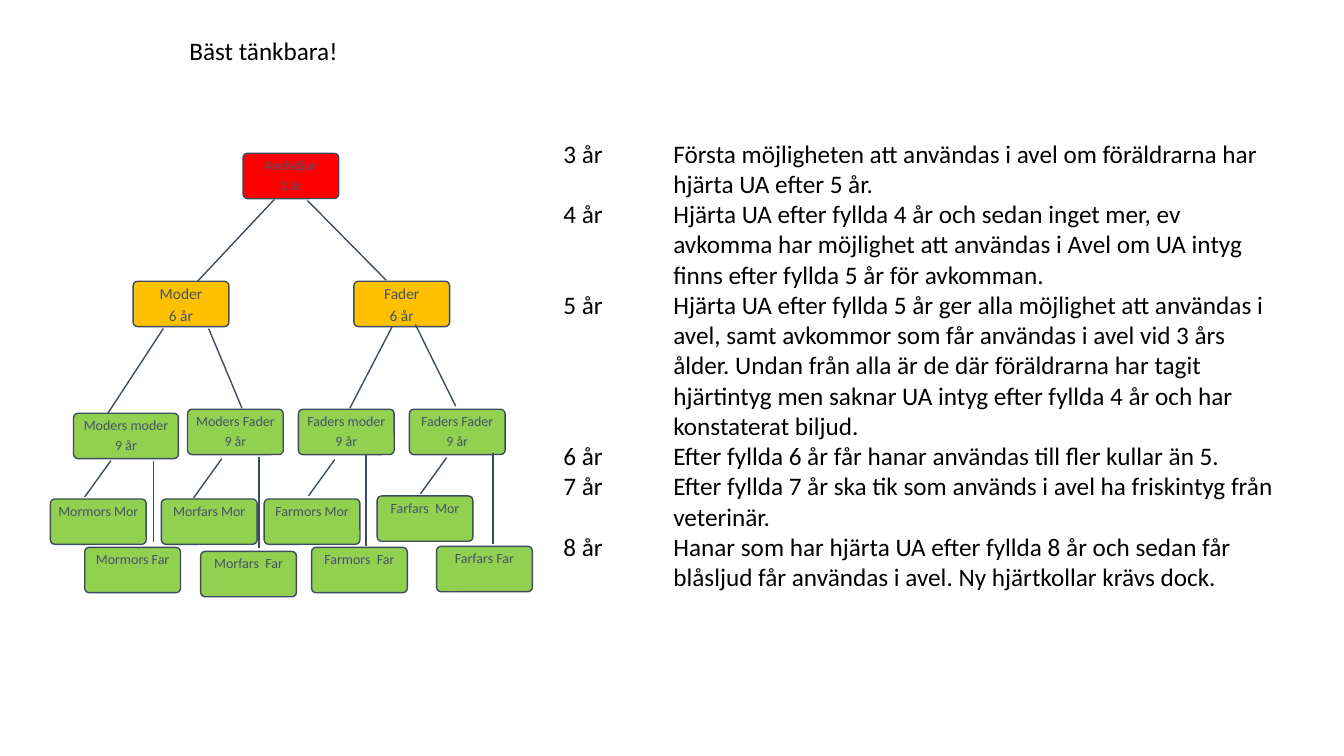
"""Builds the breeding pedigree slide with its age rules."""
from lxml import etree
from pptx import Presentation
from pptx.dml.color import RGBColor
from pptx.enum.shapes import MSO_CONNECTOR as CONN, MSO_SHAPE as SHAPE
from pptx.enum.text import MSO_ANCHOR as ANCHOR, PP_ALIGN as ALIGN
from pptx.oxml.ns import qn
from pptx.util import Inches, Pt

COLORS = {"text": "000000", "label": "44546A", "line": "3E4C60",
          "animal": "FF0000", "parent": "FFC000", "ancestor": "92D050"}
BOX_W, BOX_H = 0.95, 0.45
LINE_PT = 21.6


def write(tf, lines, size=18, color="text", align=ALIGN.LEFT, spacing=1.0, after=0, gaps=()):
    for i, text in enumerate(lines):
        p = tf.paragraphs[0] if i == 0 else tf.add_paragraph()
        p.alignment = align
        p.line_spacing = spacing
        p.space_after = Pt(after)
        if gaps:
            p.space_before = Pt(gaps[i])
        r = p.add_run()
        r.text = text
        r.font.size = Pt(size)
        r.font.name = "Calibri"
        r.font.color.rgb = RGBColor.from_string(COLORS[color])


prs = Presentation()
prs.slide_width, prs.slide_height = Inches(13.33), Inches(7.5)
s = prs.slides.add_slide(prs.slide_layouts[6])

rules = [
    ("3 år", 2, "Första möjligheten att användas i avel om föräldrarna har hjärta UA efter 5 år."),
    ("4 år", 3, "Hjärta UA efter fyllda 4 år och sedan inget mer, ev avkomma har möjlighet att "
                "användas i Avel om UA intyg finns efter fyllda 5 år för avkomman."),
    ("5 år", 5, "Hjärta UA efter fyllda 5 år ger alla möjlighet att användas i avel, samt avkommor "
                "som får användas i avel vid 3 års ålder. Undan från alla är de där föräldrarna har "
                "tagit hjärtintyg men saknar UA intyg efter fyllda 4 år och har konstaterat biljud."),
    ("6 år", 1, "Efter fyllda 6 år får hanar användas till fler kullar än 5."),
    ("7 år", 2, "Efter fyllda 7 år ska tik som används i avel ha friskintyg från veterinär."),
    ("8 år", 2, "Hanar som har hjärta UA efter fyllda 8 år och sedan får blåsljud får användas i "
                "avel. Ny hjärtkollar krävs dock."),
]
ages, heights, texts = zip(*rules)
age_gaps = [0] + [(n - 1) * LINE_PT for n in heights[:-1]]

for x, y, w, h, lines, gaps in [
    (6.58, 1.32, 6.25, 4.64, texts, ()),
    (5.49, 1.32, 0.64, 4.34, ages, age_gaps),
    (1.78, 0.3, 1.94, 0.4, ["Bäst tänkbara!"], ()),
]:
    tf = s.shapes.add_textbox(Inches(x), Inches(y), Inches(w), Inches(h)).text_frame
    tf.word_wrap = True
    write(tf, lines, gaps=gaps)

boxes = [
    (2.41, 1.52, BOX_W, "animal", 10, ["Avelsdjur", "3 år"]),
    (1.32, 2.79, BOX_W, "parent", 11, ["Moder", "6 år"]),
    (3.51, 2.79, BOX_W, "parent", 11, ["Fader", "6 år"]),
    (0.73, 4.1, 1.04, "ancestor", 10, ["Moders moder", "9 år"]),
    (1.86, 4.06, BOX_W, "ancestor", 10, ["Moders Fader", "9 år"]),
    (2.96, 4.06, BOX_W, "ancestor", 10, ["Faders moder", "9 år"]),
    (4.06, 4.06, BOX_W, "ancestor", 10, ["Faders Fader", "9 år"]),
    (0.5, 4.95, BOX_W, "ancestor", 10, ["Mormors Mor"]),
    (0.84, 5.43, BOX_W, "ancestor", 10, ["Mormors Far"]),
    (1.6, 4.95, BOX_W, "ancestor", 10, ["Morfars Mor"]),
    (1.99, 5.47, BOX_W, "ancestor", 10, ["Morfars  Far"]),
    (2.62, 4.95, BOX_W, "ancestor", 10, ["Farmors Mor"]),
    (3.09, 5.43, BOX_W, "ancestor", 10, ["Farmors  Far"]),
    (3.74, 4.92, BOX_W, "ancestor", 10, ["Farfars  Mor"]),
    (4.33, 5.42, BOX_W, "ancestor", 10, ["Farfars Far"]),
]
for x, y, w, fill, size, lines in boxes:
    sp = s.shapes.add_shape(SHAPE.ROUNDED_RECTANGLE, Inches(x), Inches(y), Inches(w), Inches(BOX_H))
    sp.adjustments[0] = 0.1
    sp.shadow.inherit = False
    sp.fill.solid()
    sp.fill.fore_color.rgb = RGBColor.from_string(COLORS[fill])
    sp.line.color.rgb = RGBColor.from_string(COLORS["line"])
    sp.line.width = Pt(1)
    tf = sp.text_frame
    tf.word_wrap = True
    tf.vertical_anchor = ANCHOR.TOP
    tf.margin_left = tf.margin_right = tf.margin_bottom = Inches(0.02)
    tf.margin_top = Inches(0.04)
    write(tf, lines, size=size, color="label", align=ALIGN.CENTER, spacing=0.9, after=3.5)

branches = [
    (2.72, 1.98, 1.96, 2.79), (3.05, 1.99, 3.83, 2.78),
    (1.62, 3.26, 1.07, 4.1), (2.07, 3.26, 2.4, 4.05),
    (3.89, 3.24, 3.47, 4.05), (4.12, 3.22, 4.52, 4.03),
    (1.1, 4.57, 0.84, 4.93), (1.52, 4.57, 1.52, 5.38),
    (2.2, 4.55, 1.92, 4.94), (2.57, 4.53, 2.57, 5.44),
    (3.32, 4.56, 3.06, 4.92), (3.63, 4.51, 3.63, 5.42),
    (4.43, 4.54, 4.17, 4.9), (4.89, 4.49, 4.89, 5.4),
]
for branch in branches:
    line = s.shapes.add_connector(CONN.STRAIGHT, *[Inches(v) for v in branch])
    line.line.color.rgb = RGBColor.from_string(COLORS["line"])
    line.line.width = Pt(1)
    etree.SubElement(line._element.spPr, qn("a:effectLst"))

prs.save("out.pptx")
